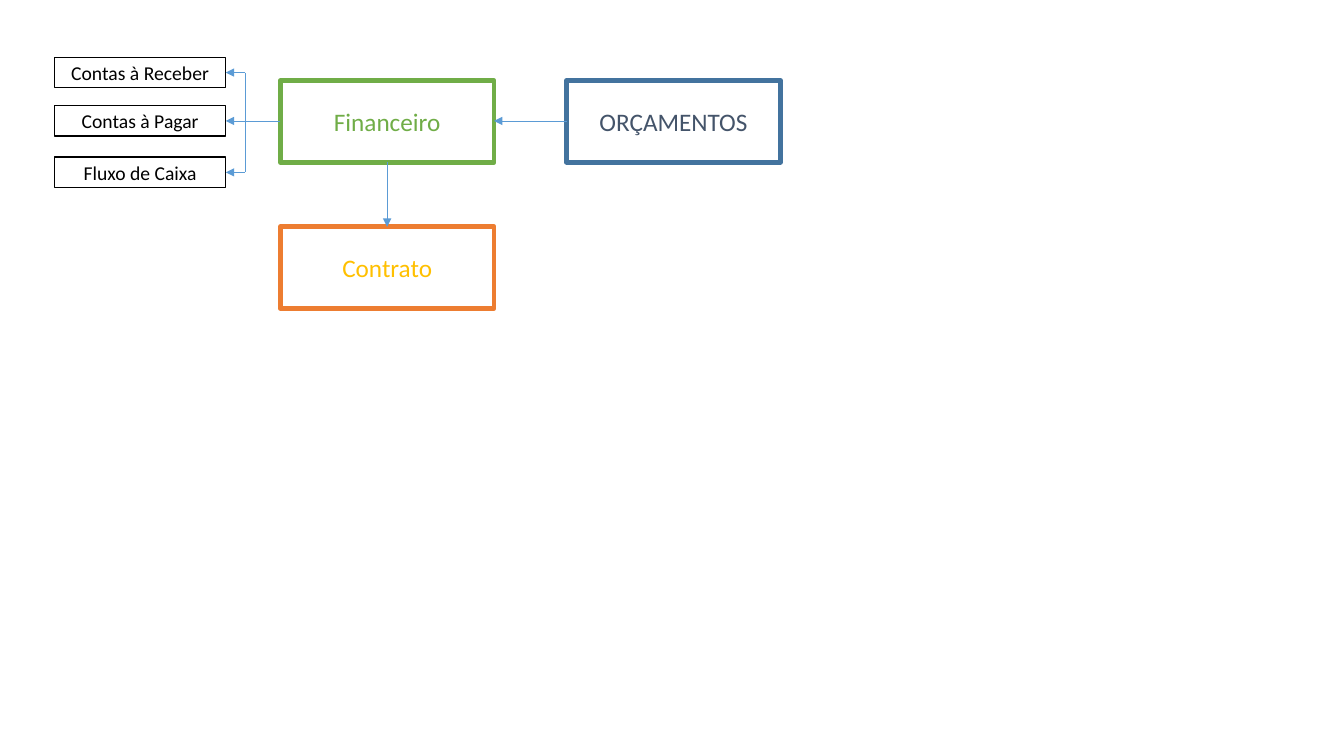
from dataclasses import dataclass

from lxml.etree import SubElement
from pptx import Presentation
from pptx.dml.color import RGBColor as Color
from pptx.enum.shapes import MSO_CONNECTOR as Connector, MSO_SHAPE as Shape
from pptx.enum.text import MSO_ANCHOR as Anchor, PP_ALIGN as Align
from pptx.oxml.ns import qn
from pptx.util import Inches, Pt


@dataclass(frozen=True)
class Theme:
    font: str = "Calibri"
    navy: str = "43739E"
    slate: str = "44546A"
    green: str = "70AD47"
    orange: str = "ED7D31"
    gold: str = "FFC000"
    black: str = "000000"
    arrow: str = "5B9BD5"
    module_size: float = 18
    detail_size: float = 14
    module_line: float = 3.5
    detail_line: float = 1
    arrow_line: float = 0.5


class Diagram:
    """Draws boxes and arrows on one slide in a shared style."""

    def __init__(self, slide, theme):
        self.slide = slide
        self.theme = theme

    def box(self, text, left, top, width, height, border, color, size, line_width):
        shape = self.slide.shapes.add_shape(
            Shape.RECTANGLE, Inches(left), Inches(top), Inches(width), Inches(height))
        shape.shadow.inherit = False
        shape.fill.background()
        shape.line.color.rgb = Color.from_string(border)
        shape.line.width = Pt(line_width)
        frame = shape.text_frame
        for name, value in {"word_wrap": True, "vertical_anchor": Anchor.MIDDLE}.items():
            setattr(frame, name, value)
        paragraph = frame.paragraphs[0]
        paragraph.alignment = Align.CENTER
        run = paragraph.add_run()
        run.text = text
        for name, value in {"name": self.theme.font, "size": Pt(size)}.items():
            setattr(run.font, name, value)
        run.font.color.rgb = Color.from_string(color)

    def module(self, text, left, top, border, color):
        self.box(text, left, top, MODULE_WIDTH, MODULE_HEIGHT, border, color,
                 self.theme.module_size, self.theme.module_line)

    def detail(self, text, top):
        self.box(text, DETAIL_LEFT, top, DETAIL_WIDTH, DETAIL_HEIGHT, self.theme.black,
                 self.theme.black, self.theme.detail_size, self.theme.detail_line)

    def line(self, start, end, arrowhead=True):
        connector = self.slide.shapes.add_connector(
            Connector.STRAIGHT, *(Inches(length) for length in (*start, *end)))
        connector.line.color.rgb = Color.from_string(self.theme.arrow)
        connector.line.width = Pt(self.theme.arrow_line)
        if arrowhead:
            SubElement(connector.line._get_or_add_ln(), qn("a:tailEnd"), type="triangle")
        SubElement(connector._element.spPr, qn("a:effectLst"))


MODULE_WIDTH, MODULE_HEIGHT = 2.12, 0.81
DETAIL_LEFT, DETAIL_WIDTH, DETAIL_HEIGHT = 0.54, 1.7, 0.3
FINANCE_LEFT, BUDGET_LEFT = 2.78, 5.62
MODULE_TOP, CONTRACT_TOP = 0.8, 2.25
BRANCH_X = 2.43
DETAILS = {"Contas à Receber": 0.57, "Contas à Pagar": 1.05, "Fluxo de Caixa": 1.56}


def main():
    presentation = Presentation()
    presentation.slide_width = Inches(13.33)
    presentation.slide_height = Inches(7.5)
    slide = presentation.slides.add_slide(presentation.slide_layouts[6])
    theme = Theme()
    diagram = Diagram(slide, theme)

    diagram.module("ORÇAMENTOS", BUDGET_LEFT, MODULE_TOP, theme.navy, theme.slate)
    diagram.module("Financeiro", FINANCE_LEFT, MODULE_TOP, theme.green, theme.green)
    diagram.module("Contrato", FINANCE_LEFT, CONTRACT_TOP, theme.orange, theme.gold)
    for text, top in DETAILS.items():
        diagram.detail(text, top)

    detail_right = DETAIL_LEFT + DETAIL_WIDTH
    upper, middle, lower = (top + DETAIL_HEIGHT / 2 for top in DETAILS.values())
    diagram.line((BRANCH_X, upper), (BRANCH_X, lower), arrowhead=False)
    for start_x, y in ((BRANCH_X, upper), (FINANCE_LEFT, middle), (BRANCH_X, lower)):
        diagram.line((start_x, y), (detail_right, y))

    finance_center = FINANCE_LEFT + MODULE_WIDTH / 2
    diagram.line((finance_center, MODULE_TOP + MODULE_HEIGHT), (finance_center, CONTRACT_TOP))
    diagram.line((BUDGET_LEFT, middle), (FINANCE_LEFT + MODULE_WIDTH, middle))

    presentation.save("out.pptx")


if __name__ == "__main__":
    main()
